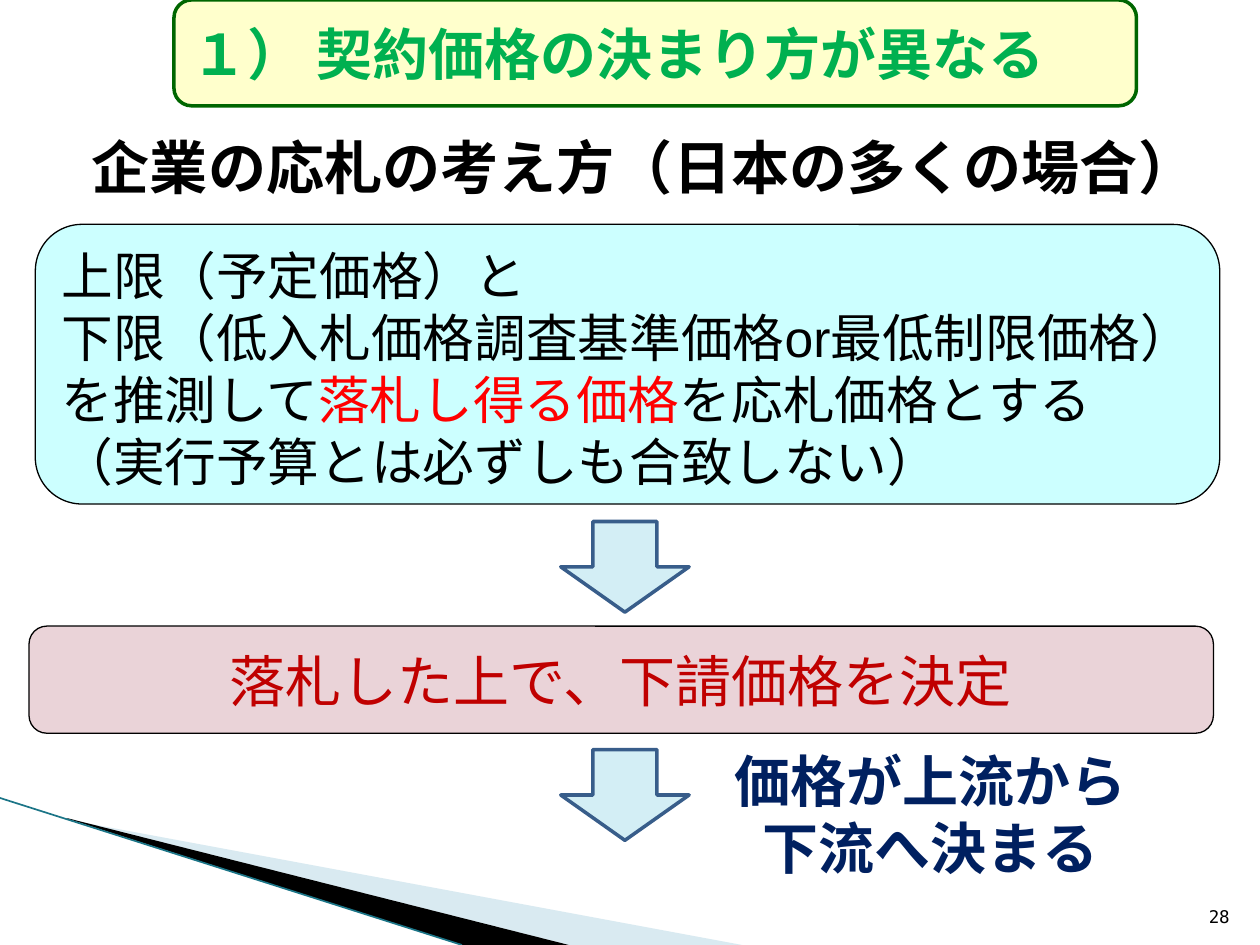
from dataclasses import dataclass

from lxml.etree import SubElement
from pptx import Presentation
from pptx.dml.color import RGBColor
from pptx.enum.shapes import MSO_CONNECTOR, MSO_SHAPE
from pptx.enum.text import MSO_ANCHOR as Anchor, PP_ALIGN as Align
from pptx.oxml.ns import qn
from pptx.util import Pt


@dataclass(frozen=True)
class Theme:
    """Colours, fonts and type sizes of the slide."""
    black: str = "000000"
    red: str = "FF0000"
    crimson: str = "C00000"
    navy: str = "002060"
    green: str = "00B050"
    dark_green: str = "006600"
    cream: str = "FFFFCC"
    cyan: str = "CCFFFF"
    pink: str = "EAD3D8"
    arrow_fill: str = "D3EEF5"
    arrow_line: str = "385D8A"
    wedge: str = "A0CBDC"
    edge: str = "1B7587"
    japanese: str = "Noto Sans CJK JP"
    latin: str = "Arial"
    mono: str = "DejaVu Sans Mono"
    heading: float = 32
    subtitle: float = 33.2
    body: float = 29.5
    number: float = 10


THEME = Theme()


def write(shape, paragraphs, size, font, bold=False, align=Align.LEFT,
          anchor=Anchor.MIDDLE, pitch=None, top=3.6, right=7.2, wrap=True):
    """Fill a shape with paragraphs, each a list of (text, colour) runs."""
    frame = shape.text_frame
    frame.word_wrap = wrap
    frame.vertical_anchor = anchor
    frame.margin_left, frame.margin_right = Pt(7.2), Pt(right)
    frame.margin_top, frame.margin_bottom = Pt(top), Pt(3.6)
    for index, runs in enumerate(paragraphs):
        paragraph = frame.paragraphs[0] if index == 0 else frame.add_paragraph()
        paragraph.alignment = align
        if pitch:
            paragraph.line_spacing = Pt(pitch)
        for text, colour in runs:
            run = paragraph.add_run()
            run.text = text
            run.font.size = Pt(size)
            run.font.bold = bold
            run.font.name = font
            run.font.color.rgb = RGBColor.from_string(colour)
            east_asian = SubElement(run.font._element, qn("a:ea"))
            east_asian.set("typeface", THEME.japanese)


def add_box(slide, kind, box, fill, line, width):
    """Add a preset shape with a solid fill and outline."""
    shape = slide.shapes.add_shape(kind, *map(Pt, box))
    shape.shadow.inherit = False
    shape.fill.solid()
    shape.fill.fore_color.rgb = RGBColor.from_string(fill)
    shape.line.color.rgb = RGBColor.from_string(line)
    shape.line.width = Pt(width)
    return shape


def add_label(slide, box, paragraphs, size, font, **options):
    """Add a text box holding the given paragraphs."""
    write(slide.shapes.add_textbox(*map(Pt, box)), paragraphs, size, font, **options)


def add_wedge(slide, points, fill, opacity=100):
    """Add one filled sliver of the corner decoration."""
    builder = slide.shapes.build_freeform(Pt(points[0][0]), Pt(points[0][1]))
    builder.add_line_segments([(Pt(x), Pt(y)) for x, y in points[1:]])
    shape = builder.convert_to_shape()
    shape.shadow.inherit = False
    shape.line.fill.background()
    shape.fill.solid()
    shape.fill.fore_color.rgb = RGBColor.from_string(fill)
    if opacity < 100:
        colour = shape._element.spPr.find(qn("a:solidFill"))[0]
        SubElement(colour, qn("a:alpha")).set("val", str(opacity * 1000))


def add_decoration(slide, box):
    """Draw the slanted wedges and edge line in the bottom left corner."""
    left, top, width, height = box
    bottom = top + height
    add_wedge(slide, [(left + 39.6, top + 12.6), (left + width, bottom),
                      (left + 325, bottom), (left + 39.6, top + 12)], THEME.wedge, 40)
    add_wedge(slide, [(left + 38.2, top + 11.5), (left + 325, bottom),
                      (left + 264, bottom), (left + 38.9, top + 12)], THEME.black)
    edge = slide.shapes.add_connector(MSO_CONNECTOR.STRAIGHT, Pt(left), Pt(top),
                                      Pt(left + 264), Pt(bottom))
    edge.line.color.rgb = RGBColor.from_string(THEME.edge)
    edge.line.width = Pt(0.95)
    SubElement(edge._element.spPr, qn("a:effectLst"))


def add_heading(slide, box):
    """Add the framed heading at the top."""
    shape = add_box(slide, MSO_SHAPE.FLOWCHART_ALTERNATE_PROCESS, box,
                    THEME.cream, THEME.dark_green, 2)
    write(shape, [[("１） 契約価格の決まり方が異なる", THEME.green)]],
          THEME.heading, THEME.japanese, bold=True)


def add_bidding_panel(slide, box):
    """Add the panel on how the bid price is chosen."""
    shape = add_box(slide, MSO_SHAPE.ROUNDED_RECTANGLE, box, THEME.cyan, THEME.black, 0.75)
    write(shape, [
        [("上限（予定価格）と", THEME.black)],
        [("下限（低入札価格調査基準価格or最低制限価格）", THEME.black)],
        [("を推測して", THEME.black), ("落札し得る価格", THEME.red),
         ("を応札価格とする", THEME.black)],
        [("（実行予算とは必ずしも合致しない）", THEME.black)],
    ], THEME.body, THEME.latin, anchor=Anchor.TOP, pitch=35.5, top=3.3, right=0,
        wrap=False)


def add_subcontract_panel(slide, box):
    """Add the panel on fixing the subcontract price."""
    shape = add_box(slide, MSO_SHAPE.ROUNDED_RECTANGLE, box, THEME.pink, THEME.black, 0.75)
    write(shape, [[("落札した上で、下請価格を決定", THEME.crimson)]],
          THEME.heading, THEME.latin, align=Align.CENTER)


def add_down_arrow(slide, box):
    """Add a block arrow leading to the next step."""
    add_box(slide, MSO_SHAPE.DOWN_ARROW, box, THEME.arrow_fill, THEME.arrow_line, 2)


def build_slide(slide):
    """Place every region on the slide."""
    add_decoration(slide, (0, 456, 424, 84))
    add_label(slide, (31, 71.3, 674.6, 47.5),
              [[("企業の応札の考え方（日本の多くの場合）", THEME.black)]],
              THEME.subtitle, THEME.japanese, bold=True, align=Align.CENTER)
    add_label(slide, (411, 423.4, 242, 85),
              [[("価格が上流から", THEME.navy)], [("下流へ決まる", THEME.navy)]],
              THEME.heading, THEME.japanese, bold=True, align=Align.CENTER,
              anchor=Anchor.TOP, pitch=38.3)
    add_bidding_panel(slide, (20.2, 128.2, 676.8, 159.8))
    add_subcontract_panel(slide, (16.6, 357.8, 676.8, 61.2))
    for top in (298, 428.4):
        add_down_arrow(slide, (320.4, top, 73.4, 51.8))
    add_label(slide, (681, 504.7, 28.8, 28.8), [[("28", THEME.black)]],
              THEME.number, THEME.mono, align=Align.RIGHT, anchor=Anchor.BOTTOM)
    add_heading(slide, (99.4, 0, 550, 60.5))


def main():
    """Build the presentation and save it."""
    presentation = Presentation()
    presentation.slide_width, presentation.slide_height = Pt(720), Pt(540)
    build_slide(presentation.slides.add_slide(presentation.slide_layouts[6]))
    presentation.save("out.pptx")


if __name__ == "__main__":
    main()
